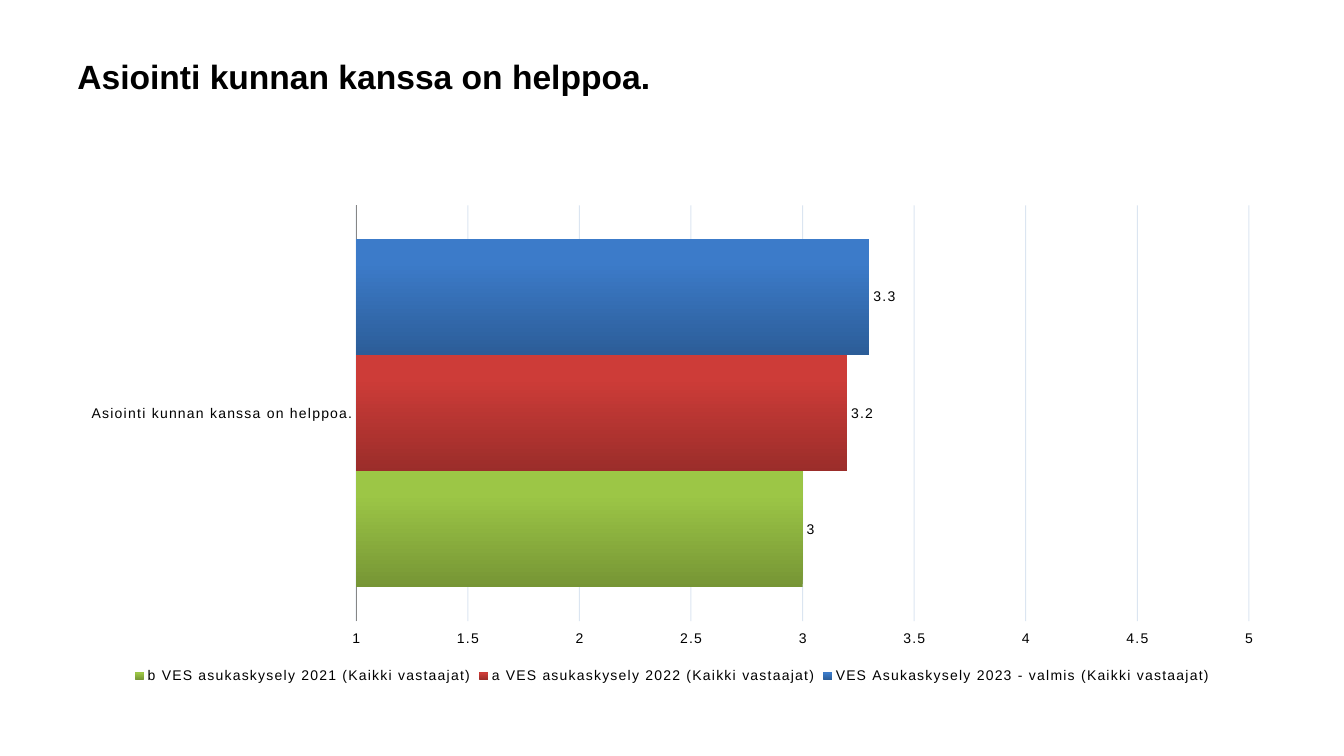
from pptx import Presentation
from pptx.chart.data import CategoryChartData
from pptx.dml.color import RGBColor
from pptx.enum.chart import (
    XL_CHART_TYPE as ChartType, XL_LABEL_POSITION as LabelPos,
    XL_LEGEND_POSITION as LegendPos, XL_TICK_LABEL_POSITION as TickLabelPos,
    XL_TICK_MARK as Tick)
from pptx.enum.text import MSO_ANCHOR as Anchor
from pptx.oxml.ns import qn
from pptx.util import Cm, Pt
from lxml.etree import SubElement

BLACK = RGBColor(0x00, 0x00, 0x00)
GRID = RGBColor(0x4F, 0x81, 0xBD)
AXIS = RGBColor(0x86, 0x86, 0x86)
BLUES = RGBColor(0x2C, 0x5D, 0x98), RGBColor(0x3C, 0x7B, 0xC9)
REDS = RGBColor(0x9B, 0x2D, 0x2A), RGBColor(0xCD, 0x3C, 0x38)
GREENS = RGBColor(0x76, 0x95, 0x35), RGBColor(0x9C, 0xC6, 0x46)
FONT = "Arial"
QUESTION = "Asiointi kunnan kanssa on helppoa."
SURVEYS = [
    ("VES Asukaskysely 2023 - valmis (Kaikki vastaajat)", 3.3, BLUES),
    ("a VES asukaskysely 2022 (Kaikki vastaajat)", 3.2, REDS),
    ("b VES asukaskysely 2021 (Kaikki vastaajat)", 3, GREENS),
]


def format_font(font, size=10, bold=False, color=BLACK):
    """Apply the slide's typeface with a size, weight and colour."""
    font.name, font.size, font.bold = FONT, Pt(size), bold
    font.color.rgb = color


def add_text(s, text, left, top, width, height, **fmt):
    """Add a wrapped, vertically centred line of text."""
    tf = s.shapes.add_textbox(left, top, width, height).text_frame
    tf.word_wrap = True
    tf.vertical_anchor = Anchor.MIDDLE
    r = tf.paragraphs[0].add_run()
    r.text = text
    format_font(r.font, **fmt)


def style_axes(chart):
    """Set the scale, gridlines and direction of both axes."""
    cat, val = chart.category_axis, chart.value_axis
    for axis in (cat, val):
        axis.major_tick_mark = axis.minor_tick_mark = Tick.NONE
        format_font(axis.tick_labels.font)
    cat.reverse_order = True
    cat.format.line.color.rgb = AXIS
    val.minimum_scale, val.maximum_scale, val.major_unit = 1, 5, 0.5
    val.tick_label_position = TickLabelPos.HIGH
    val.format.line.fill.background()
    gridlines = val.major_gridlines
    gridlines.format.line.width = Pt(0.75)
    gridlines.format.line.color.rgb = GRID
    for color in chart.element.iter(qn("a:srgbClr")):
        if color.get("val") == str(GRID):
            SubElement(color, qn("a:alpha"), val="20000")


def style_series(series, shades):
    """Give a bar its vertical gradient and value label."""
    fill = series.format.fill
    fill.gradient()
    fill.gradient_angle = 90
    for stop, shade, position in zip(fill.gradient_stops, shades, (0, 0.8)):
        stop.color.rgb, stop.position = shade, position
    labels = series.data_labels
    labels.show_value = True
    labels.position = LabelPos.OUTSIDE_END
    format_font(labels.font)


def add_bar_chart(s, left, top, width, height):
    """Add the survey comparison as a clustered bar chart."""
    data = CategoryChartData()
    data.categories = [QUESTION]
    for name, value, _ in SURVEYS:
        data.add_series(name, [value])
    chart = s.shapes.add_chart(
        ChartType.BAR_CLUSTERED, left, top, width, height, data).chart
    chart.has_title = False
    format_font(chart.font)
    style_axes(chart)
    plot = chart.plots[0]
    plot.gap_width, plot.overlap, plot.vary_by_categories = 58, 0, False
    for series, (_, _, shades) in zip(plot.series, SURVEYS):
        style_series(series, shades)
    chart.has_legend = True
    chart.legend.position = LegendPos.BOTTOM
    chart.legend.include_in_layout = False
    format_font(chart.legend.font)
    for props in chart.element.iter(qn("a:defRPr")):
        props.set("spc", "100")


def main():
    """Build the slide and save it."""
    prs = Presentation()
    prs.slide_width, prs.slide_height = Cm(33.87), Cm(19.05)
    s = prs.slides.add_slide(prs.slide_layouts[6])
    add_text(s, QUESTION, Cm(1.7), Cm(0.91), Cm(30.48), Cm(2.01),
             size=24, bold=True)
    add_bar_chart(s, Cm(1.7), Cm(4.93), Cm(30.48), Cm(12.4))
    prs.save("out.pptx")


if __name__ == "__main__":
    main()
